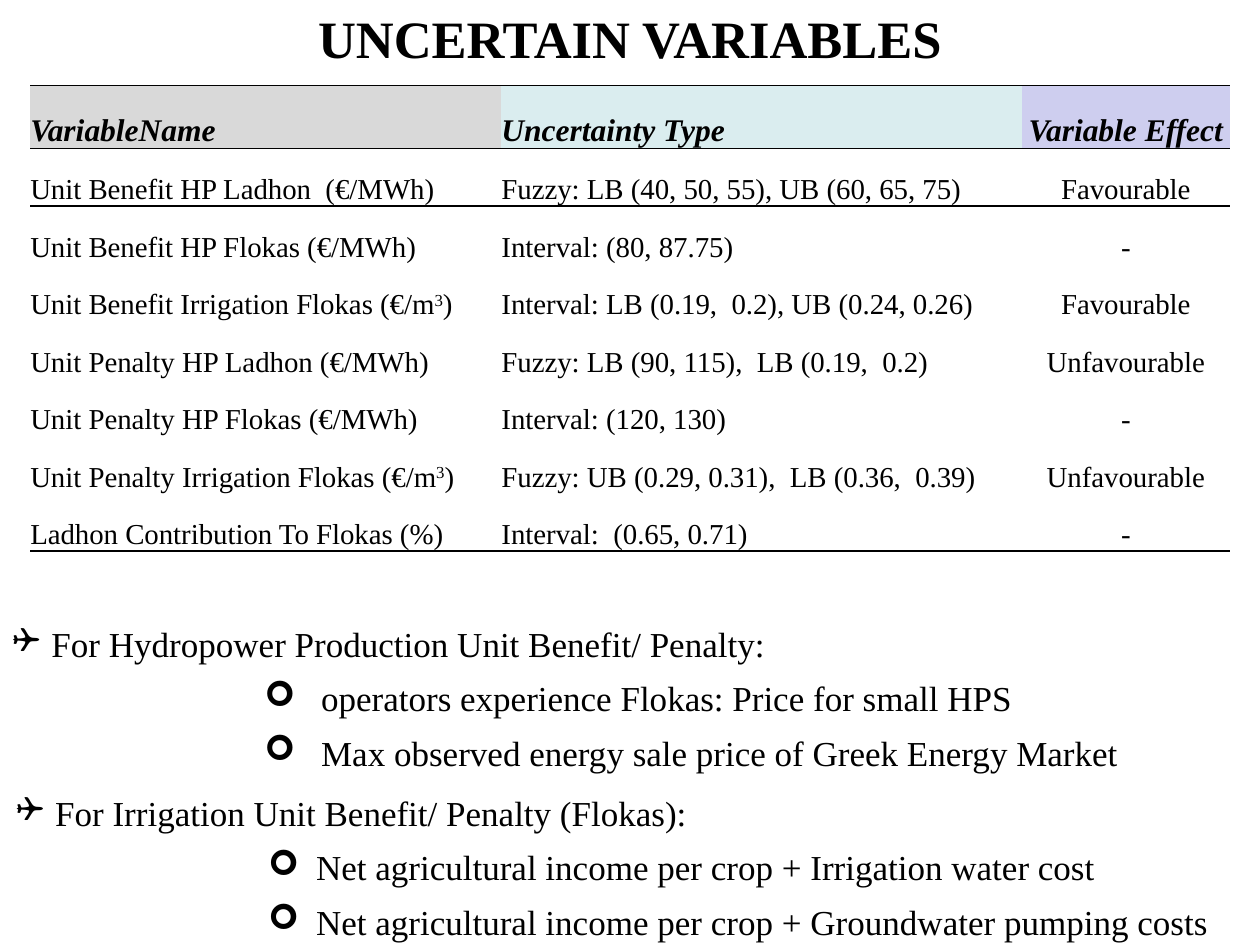
from lxml import etree
from pptx import Presentation
from pptx import util as u
from pptx.dml.color import RGBColor
from pptx.enum import text
from pptx.oxml.ns import qn

FONT = "Times New Roman"
COLORS = {"ink": "000000", "name": "D9D9D9", "type": "DAEDEF", "effect": "CECEEF"}
NO_TABLE_STYLE = "{2D5ABB26-0587-4C30-8999-92F81FD0307C}"
LEFT, CENTER, JUSTIFY = text.PP_ALIGN.LEFT, text.PP_ALIGN.CENTER, text.PP_ALIGN.JUSTIFY
MIDDLE, BOTTOM = text.MSO_ANCHOR.MIDDLE, text.MSO_ANCHOR.BOTTOM

# Each column: width, header fill, alignment, anchor of the body cells
COLUMNS = [
    (3.74, "name", LEFT, BOTTOM),
    (4.13, "type", LEFT, MIDDLE),
    (1.65, "effect", CENTER, BOTTOM),
]
# Text between carets is superscript
ROWS = [
    ("VariableName", "Uncertainty Type", "Variable Effect"),
    ("Unit Benefit HP Ladhon  (€/MWh)", "Fuzzy: LB (40, 50, 55), UB (60, 65, 75)", "Favourable"),
    ("Unit Benefit HP Flokas (€/MWh)", "Interval: (80, 87.75)", "-"),
    ("Unit Benefit Irrigation Flokas (€/m^3^)", "Interval: LB (0.19,  0.2), UB (0.24, 0.26)",
     "Favourable"),
    ("Unit Penalty HP Ladhon (€/MWh)", "Fuzzy: LB (90, 115),  LB (0.19,  0.2)", "Unfavourable"),
    ("Unit Penalty HP Flokas (€/MWh)", "Interval: (120, 130)", "-"),
    ("Unit Penalty Irrigation Flokas (€/m^3^)", "Fuzzy: UB (0.29, 0.31),  LB (0.36,  0.39)",
     "Unfavourable"),
    ("Ladhon Contribution To Flokas (%)", "Interval:  (0.65, 0.71)", "-"),
]


def write(p, content, size, bold=False, italic=False, align=LEFT, spacing=None):
    p.alignment = align
    if spacing:
        p.line_spacing = spacing
    for i, part in enumerate(content.split("^")):
        r = p.add_run()
        r.text = part
        r.font.name = FONT
        r.font.size = u.Pt(size)
        r.font.bold, r.font.italic = bold, italic
        r.font.color.rgb = RGBColor.from_string(COLORS["ink"])
        if i % 2:
            r.font._element.set("baseline", "30000")


def set_bullet(p, char, margin, hanging):
    pPr = p._p.get_or_add_pPr()
    pPr.set("marL", str(u.Inches(margin)))
    pPr.set("indent", str(-u.Inches(hanging)))
    etree.SubElement(pPr, qn("a:buFont"), typeface="Wingdings")
    etree.SubElement(pPr, qn("a:buChar"), char=char)


def add_border(cell, side, width):
    ln = etree.SubElement(cell._tc.get_or_add_tcPr(), qn("a:" + side), w=str(u.Pt(width)))
    fill = etree.SubElement(ln, qn("a:solidFill"))
    etree.SubElement(fill, qn("a:srgbClr"), val=COLORS["ink"])


def add_title(s, content):
    sp = s.shapes.title
    sp.left, sp.top, sp.width, sp.height = (u.Inches(v) for v in (0, 0, 10, 0.6))
    sp.text_frame.vertical_anchor = MIDDLE
    write(sp.text_frame.paragraphs[0], content, 30, bold=True, align=CENTER)


def add_variable_table(s):
    frame = s.shapes.add_table(len(ROWS), len(COLUMNS), u.Inches(0.24), u.Inches(0.68),
                               u.Inches(9.52), u.Inches(3.65))
    table = frame.table
    table.first_row = table.horz_banding = False
    table._tbl.tblPr.find(qn("a:tableStyleId")).text = NO_TABLE_STYLE
    for column, (width, *_) in zip(table.columns, COLUMNS):
        column.width = u.Inches(width)
    for i, values in enumerate(ROWS):
        header = i == 0
        table.rows[i].height = u.Inches(0.5 if header else 0.45)
        for j, (_, color, align, anchor) in enumerate(COLUMNS):
            cell = table.cell(i, j)
            cell.margin_left = cell.margin_right = cell.margin_top = cell.margin_bottom = 0
            cell.vertical_anchor = BOTTOM if header else anchor
            write(cell.text_frame.paragraphs[0], values[j], 18 if header else 16.5,
                  bold=header, italic=header, align=align, spacing=1.8)
            # Rules above and below the header and under the last row
            if i < 2:
                add_border(cell, "lnT", 0.5 if header else 1)
            if header or i == len(ROWS) - 1:
                add_border(cell, "lnB", 1)
            if header:
                cell.fill.solid()
                cell.fill.fore_color.rgb = RGBColor.from_string(COLORS[color])
            else:
                cell.fill.background()


def add_notes_block(s, left, top, heading, items, hanging, align=LEFT):
    sp = s.shapes.add_textbox(u.Inches(left), u.Inches(top), u.Inches(9.99), u.Inches(1.37))
    tf = sp.text_frame
    tf.word_wrap = True
    p = tf.paragraphs[0]
    write(p, heading, 20, spacing=1.3)
    set_bullet(p, "❑", 0.31, 0.31)
    for item in items:
        p = tf.add_paragraph()
        p.level = 4
        write(p, item, 20, align=align, spacing=1.3)
        set_bullet(p, "➢", 2 + hanging, hanging)


def main():
    prs = Presentation()
    prs.slide_width, prs.slide_height = u.Inches(10), u.Inches(7.5)
    s = prs.slides.add_slide(prs.slide_layouts[5])

    add_title(s, "UNCERTAIN VARIABLES")
    add_variable_table(s)

    # Sources of the bounds
    add_notes_block(s, 0, 4.79, "For Hydropower Production Unit Benefit/ Penalty:",
                    ["operators experience Flokas: Price for small HPS",
                     "Max observed energy sale price of Greek Energy Market"], 0.45)
    add_notes_block(s, 0.03, 6.13, "For Irrigation Unit Benefit/ Penalty (Flokas):",
                    ["Net agricultural income per crop + Irrigation water cost",
                     "Net agricultural income per crop + Groundwater pumping costs"],
                    0.38, align=JUSTIFY)
    prs.save("out.pptx")


if __name__ == "__main__":
    main()
